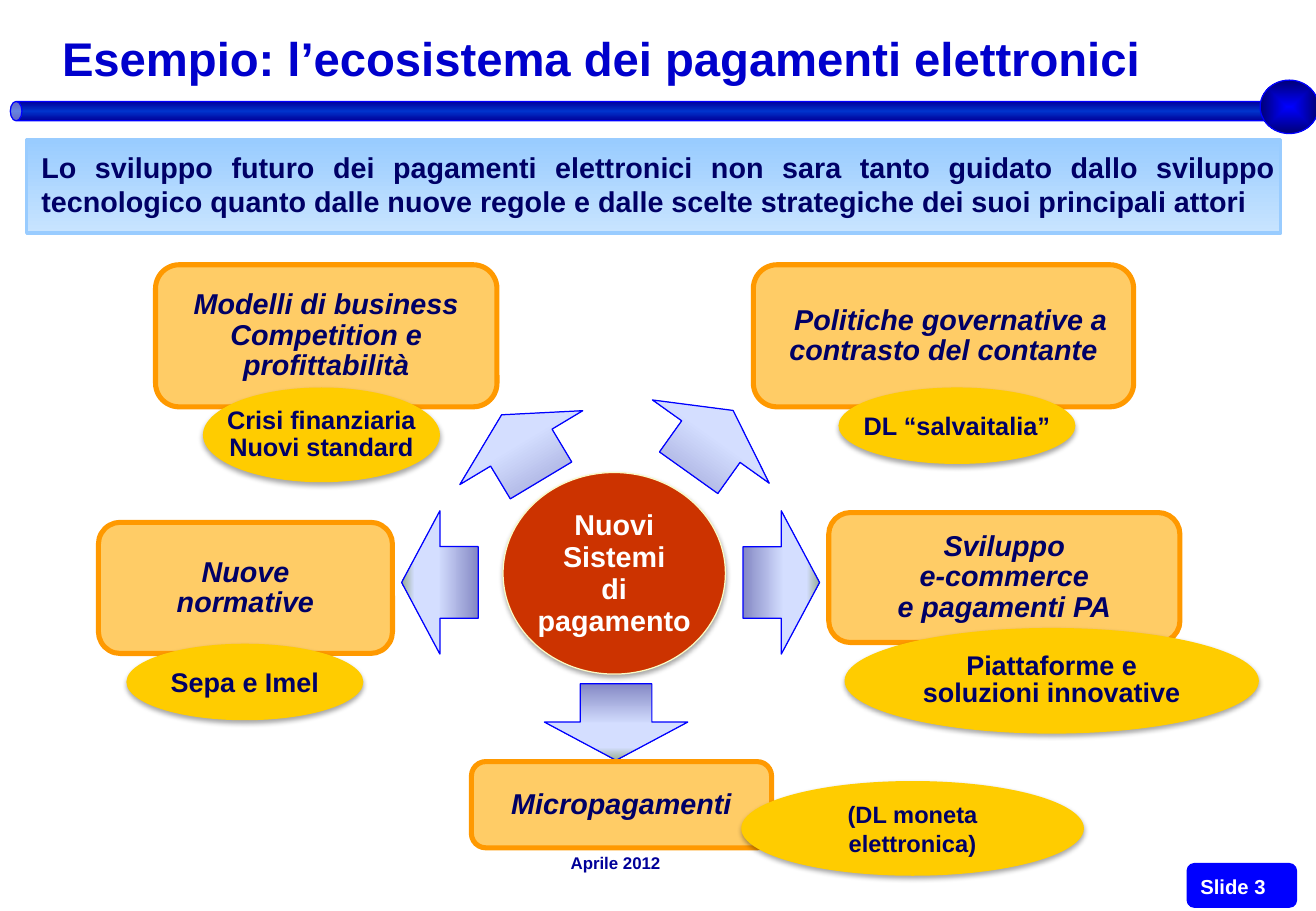
from pptx import Presentation
from pptx.dml.color import RGBColor
from pptx.enum.shapes import MSO_SHAPE
from pptx.enum.text import MSO_ANCHOR, PP_ALIGN
from pptx.oxml import parse_xml
from pptx.oxml.ns import nsdecls, qn
from pptx.util import Emu, Pt

EMU_PER_PX = 9144
FONT = "Arial"
WHITE = RGBColor(0xFF, 0xFF, 0xFF)
BLUE = RGBColor(0x00, 0x00, 0xFF)
DEEP_BLUE = RGBColor(0x00, 0x00, 0x76)
TITLE_BLUE = RGBColor(0x00, 0x00, 0xCC)
DATE_BLUE = RGBColor(0x00, 0x00, 0x99)
BAR_BLUE = RGBColor(0x00, 0x33, 0xCC)
NAVY = RGBColor(0x00, 0x00, 0x66)
SKY = RGBColor(0x99, 0xCC, 0xFF)
PALE_SKY = RGBColor(0xC8, 0xE4, 0xFF)
PEACH = RGBColor(0xFF, 0xCC, 0x66)
ORANGE = RGBColor(0xFF, 0x99, 0x00)
YELLOW = RGBColor(0xFF, 0xCC, 0x00)
RED = RGBColor(0xCC, 0x33, 0x00)
CREAM = RGBColor(0xFB, 0xFB, 0xC6)
LILAC = RGBColor(0x84, 0x88, 0xC4)
PALE_LILAC = RGBColor(0xD4, 0xDE, 0xFF)
SAGE = RGBColor(0x96, 0xAB, 0x94)

BAR_STOPS = [(0, DATE_BLUE), (50, BAR_BLUE), (100, DATE_BLUE)]
KNOB_STOPS = [(0, BLUE), (100, DEEP_BLUE)]
INTRO_STOPS = [(0, SKY), (100, PALE_SKY)]
ARROW_STOPS = [(0, LILAC), (53, PALE_LILAC), (83, PALE_LILAC), (100, SAGE)]
LINEAR = '<a:lin ang="{}" scaled="0"/>'
RADIAL = ('<a:path path="shape"><a:fillToRect l="50000" t="50000" '
          'r="50000" b="50000"/></a:path>')

INTRO = ("Lo sviluppo futuro dei pagamenti elettronici non sara tanto guidato "
         "dallo sviluppo tecnologico quanto dalle nuove regole e dalle scelte "
         "strategiche dei suoi principali attori")

FACTORS = [
    ((128, 218, 281, 117), "Modelli di business\nCompetition e profittabilità", 0),
    ((620, 218, 313, 117), "Politiche governative a contrasto del contante", 12),
    ((81, 430, 242, 108), "Nuove\nnormative", 0),
    ((682, 422, 289, 107), "Sviluppo\ne-commerce\ne pagamenti PA", 0),
    ((388, 627, 247, 71), "Micropagamenti", 0),
]
ARROWS = [(370, 337, 149), (303, 448, 90), (584, 448, 270),
          (526, 332, 215.5), (448, 563, 0)]
EXAMPLES = [
    ((167, 319, 195, 78), "Crisi finanziaria\nNuovi standard",
     dict(size=15, spacing=Pt(16), wrap=False)),
    ((690, 319, 195, 63), "DL “salvaitalia”", dict(size=15, wrap=False)),
    ((695, 517, 341, 87), "Piattaforme e soluzioni innovative",
     dict(size=16, spacing=Pt(16), insets=(0, 5, 0, 5))),
    ((104, 530, 195, 63), "Sepa e Imel", dict(size=16, wrap=False)),
    ((610, 643, 282, 78), "(DL moneta elettronica)",
     dict(size=14, spacing=Pt(17), insets=(4, 4, 4, 4))),
]


def px(length):
    """Turn a length in px into EMU."""
    return Emu(length * EMU_PER_PX)


def write(box, text, size, color=NAVY, italic=False, align=PP_ALIGN.CENTER,
          anchor=MSO_ANCHOR.MIDDLE, spacing=None, insets=(10, 5, 10, 5),
          wrap=True, indent=0):
    """Fill a box with bold text, one paragraph per line."""
    frame = box.text_frame
    frame.word_wrap = wrap
    frame.vertical_anchor = anchor
    (frame.margin_left, frame.margin_top,
     frame.margin_right, frame.margin_bottom) = map(px, insets)
    for number, line in enumerate(text.split("\n")):
        para = frame.add_paragraph() if number else frame.paragraphs[0]
        para.alignment = align
        if spacing:
            para.line_spacing = spacing
        if indent:
            para._p.get_or_add_pPr().set("indent", str(px(indent)))
        span = para.add_run()
        span.text = line
        span.font.name = FONT
        span.font.size = Pt(size)
        span.font.bold = True
        span.font.italic = italic
        span.font.color.rgb = color


def add_label(page, place, text, **style):
    """Add a text box."""
    box = page.shapes.add_textbox(*map(px, place))
    write(box, text, **style)


def add_figure(page, kind, place, fill=None, line=None, width=0.75, rotation=0):
    """Add a preset shape with a plain fill and outline."""
    shape = page.shapes.add_shape(kind, *map(px, place))
    shape.shadow.inherit = False
    shape.rotation = rotation
    if fill is not None:
        shape.fill.solid()
        shape.fill.fore_color.rgb = fill
    if line is None:
        shape.line.fill.background()
    else:
        shape.line.color.rgb = line
        shape.line.width = Pt(width)
    return shape


def blend(shape, stops, angle=None):
    """Give a shape a linear gradient, or a radial one without an angle."""
    shape.fill.gradient()
    marks = "".join(f'<a:gs pos="{place * 1000}"><a:srgbClr val="{color}"/></a:gs>'
                    for place, color in stops)
    course = RADIAL if angle is None else LINEAR.format(angle * 60000)
    gradient = parse_xml(f'<a:gradFill {nsdecls("a")} rotWithShape="1">'
                         f'<a:gsLst>{marks}</a:gsLst>{course}</a:gradFill>')
    properties = shape._element.spPr
    properties.replace(properties.find(qn("a:gradFill")), gradient)


def add_shadow(shape):
    """Drop a soft shadow below a shape."""
    effects = shape._element.spPr.find(qn("a:effectLst"))
    effects.append(parse_xml(
        f'<a:outerShdw {nsdecls("a")} blurRad="{Pt(3.1)}" dist="{Pt(1.8)}" '
        'dir="5400000" rotWithShape="0"><a:srgbClr val="000000">'
        '<a:alpha val="35000"/></a:srgbClr></a:outerShdw>'))


def add_oval(page, place, text, fill, line=None, **style):
    """Add a shadowed ellipse with text."""
    oval = add_figure(page, MSO_SHAPE.OVAL, place, fill, line)
    add_shadow(oval)
    write(oval, text, **style)


def add_factor(page, place, text, indent):
    """Add an orange rounded box with italic text."""
    box = add_figure(page, MSO_SHAPE.ROUNDED_RECTANGLE, place, PEACH, ORANGE, 3)
    write(box, text, size=17, italic=True, spacing=Pt(18),
          insets=(4, 4, 4, 4), indent=indent)


def add_arrow(page, left, top, rotation):
    """Add a block arrow pointing away from the centre."""
    arrow = add_figure(page, MSO_SHAPE.DOWN_ARROW, (left, top, 118, 63),
                       line=BLUE, rotation=rotation)
    blend(arrow, ARROW_STOPS, 90)


def add_frame(page):
    """Add the date, the title bar and the slide number."""
    add_label(page, (164, 699, 685, 25), "Aprile 2012", size=10,
              color=DATE_BLUE, spacing=0.9, anchor=MSO_ANCHOR.TOP)
    bar = add_figure(page, MSO_SHAPE.CAN, (523, -431, 16, 1045),
                     line=BLUE, rotation=270)
    bar.adjustments[0] = 0.6
    blend(bar, BAR_STOPS, 0)
    add_figure(page, MSO_SHAPE.ROUNDED_RECTANGLE, (977, 711, 90, 36), BLUE, BLUE)
    add_label(page, (978, 715, 88, 30), "Slide 3", size=12, color=WHITE,
              align=PP_ALIGN.LEFT, anchor=MSO_ANCHOR.TOP)
    knob = add_figure(page, MSO_SHAPE.OVAL, (1037, 66, 48, 44), line=BLUE)
    blend(knob, KNOB_STOPS)


def main():
    """Build the slide and save it."""
    deck = Presentation()
    deck.slide_width, deck.slide_height = px(1083), px(750)
    page = deck.slides.add_slide(deck.slide_layouts[6])
    add_frame(page)
    add_label(page, (14, 21, 961, 61),
              "Esempio: l’ecosistema dei pagamenti elettronici",
              size=28, color=TITLE_BLUE, spacing=0.8, insets=(8, 5, 8, 5))
    intro = add_figure(page, MSO_SHAPE.RECTANGLE, (22, 115, 1032, 77),
                       line=SKY, width=2)
    blend(intro, INTRO_STOPS, 90)
    write(intro, INTRO, size=17, align=PP_ALIGN.JUSTIFY, insets=(12, 8, 4, 12))
    add_oval(page, (414, 389, 183, 166), "Nuovi Sistemi\ndi pagamento", RED, CREAM,
             size=17, color=WHITE, spacing=Pt(19), insets=(0, 5, 0, 5))
    for arrow in ARROWS:
        add_arrow(page, *arrow)
    for factor in FACTORS:
        add_factor(page, *factor)
    for place, text, style in EXAMPLES:
        add_oval(page, place, text, YELLOW, **style)
    deck.save("out.pptx")


if __name__ == "__main__":
    main()
